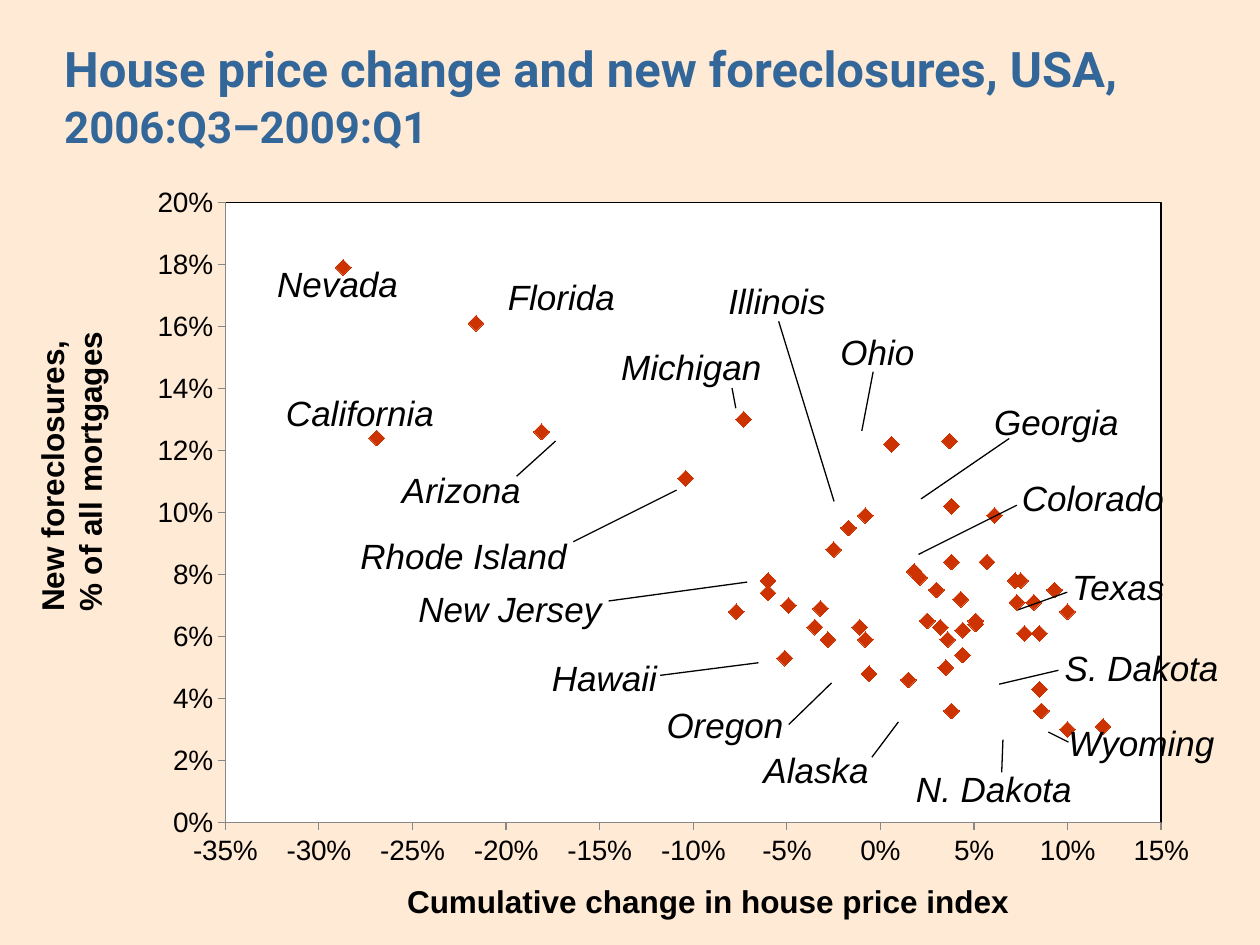
"""Build the slide on house prices and new foreclosures in the USA."""
from lxml import etree
from pptx import Presentation
from pptx import util as u
from pptx.chart import data
from pptx.dml.color import RGBColor
from pptx.enum import chart as ch, shapes, text
from pptx.oxml import ns, parse_xml

HUES = {"back": "FFEAD5", "title": "336699", "ink": "000000",
        "plot": "FFFFFF", "dot": "CC3300", "axis": "878787"}
INK = RGBColor.from_string(HUES["ink"])


def inch(n):
    return u.Cm(n * 2.54)


def add_text(words, box, size, inset=0, **style):
    shape = slide.shapes.add_textbox(*map(inch, box))
    frame = shape.text_frame
    frame.word_wrap = True
    if not inset:
        frame.margin_left = frame.margin_right = 0
        frame.margin_top = frame.margin_bottom = 0
    frame.text = words
    para = frame.paragraphs[0]
    font = para.font
    font.size, font.name = u.Pt(size), "Arial"
    font.color.rgb = INK
    for key, val in style.items():
        setattr(font, key, val)
    return shape, para


deck = Presentation()
deck.slide_width, deck.slide_height = inch(10), inch(7.5)
slide = deck.slides.add_slide(deck.slide_layouts[6])
slide.background.fill.solid()
slide.background.fill.fore_color.rgb = RGBColor.from_string(HUES["back"])

title, para = add_text("House price change and new foreclosures, USA, ",
                       (0.51, 0.26, 9.02, 0.97), 28, bold=True, name="Roboto")
title.text_frame.vertical_anchor = text.MSO_ANCHOR.MIDDLE
para.line_spacing = 1.05
para.font.color.rgb = RGBColor.from_string(HUES["title"])
dates = para.add_run()
dates.text = "2006:Q3–2009:Q1"
dates.font.size = u.Pt(25)

# x and y are in percent
points = [
    (-28.7, 17.9), (-21.6, 16.1), (-7.3, 13), (-18.1, 12.6), (-26.9, 12.4),
    (3.7, 12.3), (0.6, 12.2), (-10.4, 11.1), (3.8, 10.2), (-0.8, 9.9),
    (6.1, 9.9), (-1.7, 9.5), (-2.5, 8.8), (3.8, 8.4), (5.7, 8.4),
    (1.8, 8.1), (2.1, 7.9), (7.5, 7.8), (-6, 7.8), (7.2, 7.8),
    (3, 7.5), (9.3, 7.5), (-6, 7.4), (4.3, 7.2), (8.2, 7.1),
    (7.3, 7.1), (-4.9, 7), (-3.2, 6.9), (10, 6.8), (-7.7, 6.8),
    (2.5, 6.5), (5.1, 6.5), (5.1, 6.4), (-1.1, 6.3), (3.2, 6.3),
    (-3.5, 6.3), (4.4, 6.2), (7.7, 6.1), (8.5, 6.1), (3.6, 5.9),
    (-0.8, 5.9), (-2.8, 5.9), (4.4, 5.4), (-5.1, 5.3), (3.5, 5),
    (-0.6, 4.8), (1.5, 4.6), (8.5, 4.3), (8.6, 3.6), (3.8, 3.6),
    (11.9, 3.1), (10, 3)]
pool = data.XyChartData()
states = pool.add_series("Series 1")
for x, y in points:
    states.add_data_point(round(x / 100, 3), round(y / 100, 3))
chart = slide.shapes.add_chart(ch.XL_CHART_TYPE.XY_SCATTER,
                               *map(inch, (1.05, 1.41, 8.48, 5.59)), pool).chart
chart.has_legend = chart.has_title = False
chart.font.size, chart.font.name = u.Pt(16), "Arial"
chart.font.color.rgb = INK
chart.plots[0].vary_by_categories = False

dots = chart.plots[0].series[0]
dots.smooth = False
dots.format.line.fill.background()
dots.marker.style, dots.marker.size = ch.XL_MARKER_STYLE.DIAMOND, 9
for fill in (dots.marker.format.fill, dots.marker.format.line.fill):
    fill.solid()
    fill.fore_color.rgb = RGBColor.from_string(HUES["dot"])

for axis, low, high, step in ((chart.category_axis, -0.35, 0.15, 0.05),
                              (chart.value_axis, 0, 0.2, 0.02)):
    axis.minimum_scale, axis.maximum_scale, axis.major_unit = low, high, step
    axis.has_major_gridlines = False
    axis.major_tick_mark = ch.XL_TICK_MARK.OUTSIDE
    axis.minor_tick_mark = ch.XL_TICK_MARK.NONE
    axis.crosses = ch.XL_AXIS_CROSSES.MINIMUM
    axis.tick_labels.number_format = "0%"
    axis.tick_labels.number_format_is_linked = False
    axis.tick_labels.font.size = u.Pt(16)
    axis.format.line.width = u.Pt(0.75)
    axis.format.line.color.rgb = RGBColor.from_string(HUES["axis"])

area = chart.value_axis._element.getparent()
for old in area.findall(ns.qn("c:layout")):
    area.remove(old)
place = "".join(f'<c:{key} val="{val}"/>' for key, val in (
    ("layoutTarget", "inner"), ("xMode", "edge"), ("yMode", "edge"),
    ("x", 0.087), ("y", 0.035), ("w", 0.876), ("h", 0.881)))
area.insert(0, parse_xml(f'<c:layout {ns.nsdecls("c")}><c:manualLayout>{place}'
                         '</c:manualLayout></c:layout>'))
area.append(parse_xml(
    f'<c:spPr {ns.nsdecls("c", "a")}><a:solidFill><a:srgbClr val="{HUES["plot"]}"/>'
    f'</a:solidFill><a:ln w="9525"><a:solidFill><a:srgbClr val="{HUES["ink"]}"/>'
    '</a:solidFill></a:ln></c:spPr>'))

for words, box, turn in (
        ("New foreclosures, \v% of all mortgages", (-0.67, 3.39, 2.47, 0.71), 270),
        ("Cumulative change in house price index", (3.01, 6.95, 5.22, 0.4), 0)):
    shape, para = add_text(words, box, 18, inset=1, bold=True)
    shape.rotation = turn
    para.alignment = text.PP_ALIGN.CENTER

labels = [
    ("Nevada", 2.2, 2.08, 1.09), ("Georgia", 7.89, 3.18, 1.27),
    ("Colorado", 8.11, 3.78, 1.27), ("Texas", 8.51, 4.49, 0.86),
    ("Alaska", 6.06, 5.94, 0.87), ("Wyoming", 8.48, 5.73, 1.27),
    ("Arizona", 3.19, 3.72, 0.99), ("California", 2.27, 3.11, 1.27),
    ("Florida", 4.03, 2.19, 1.12), ("S. Dakota", 8.45, 5.13, 1.27),
    ("Illinois", 5.78, 2.22, 0.81), ("Michigan", 4.93, 2.74, 1.17),
    ("Rhode Island", 2.86, 4.24, 1.8), ("N. Dakota", 7.27, 6.09, 1.27),
    ("Oregon", 5.29, 5.58, 1.04), ("Ohio", 6.67, 2.62, 0.66),
    ("New Jersey", 3.32, 4.66, 1.56), ("Hawaii", 4.38, 5.21, 0.89)]
for name, left, top, wide in labels:
    add_text(name, (left, top, wide, 0.34), 20, italic=True)

leads = [
    (4.1, 3.78, 4.41, 3.5), (7.29, 4.4, 8.07, 4.01), (6.18, 2.55, 6.62, 3.98),
    (4.83, 4.77, 5.93, 4.62), (8.08, 4.84, 8.47, 4.7), (7.13, 5.73, 6.92, 6.01),
    (8.32, 5.81, 8.48, 5.89), (4.55, 4.3, 5.37, 3.89), (5.84, 3.24, 5.81, 3.08),
    (7.93, 5.43, 8.4, 5.32), (7.96, 5.87, 7.95, 6.13), (6.6, 5.42, 6.26, 5.75),
    (6.84, 3.42, 6.93, 2.95), (5.24, 5.36, 6.02, 5.26), (7.31, 3.96, 8.01, 3.48)]
for ends in leads:
    lead = slide.shapes.add_connector(shapes.MSO_CONNECTOR.STRAIGHT, *map(inch, ends))
    lead.line.color.rgb = INK
    lead.line.width = u.Pt(0.75)
    etree.SubElement(lead._element.spPr, ns.qn("a:effectLst"))

deck.save("out.pptx")
